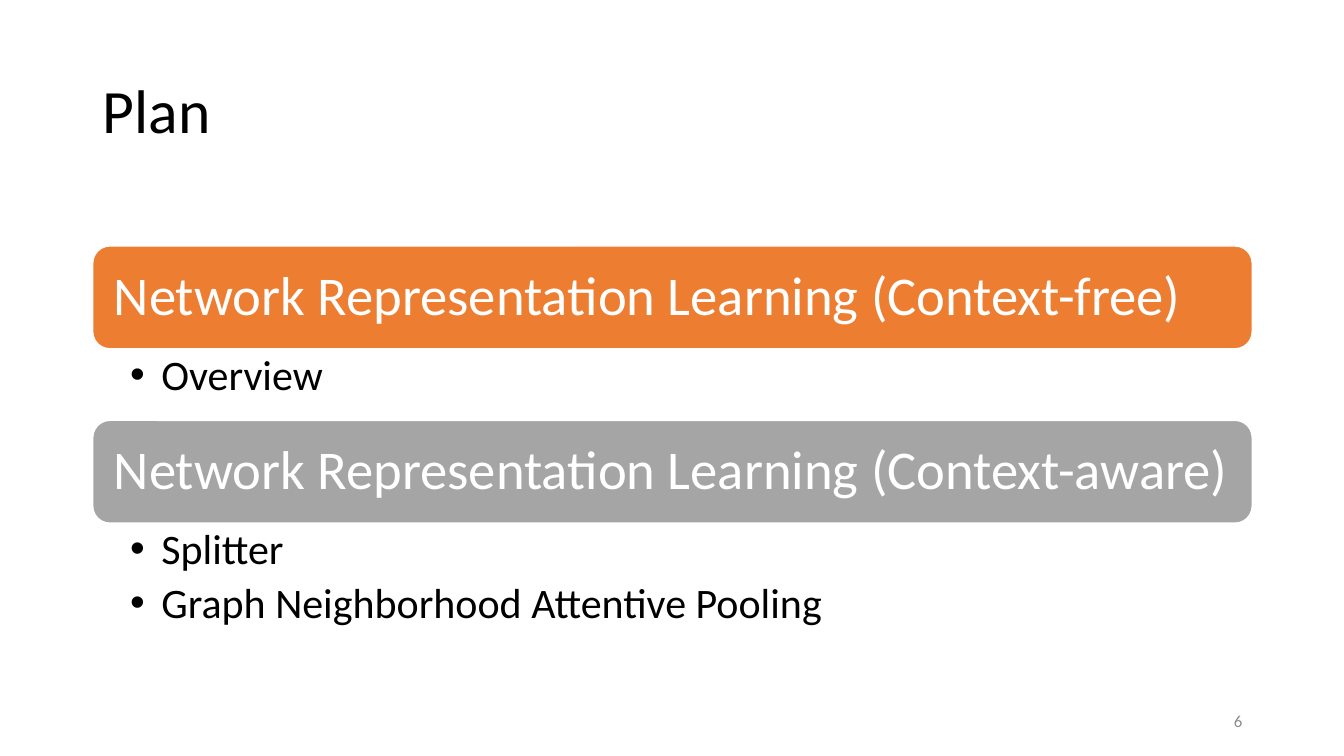
from lxml.etree import SubElement
from pptx import Presentation
from pptx.dml.color import RGBColor
from pptx.enum.shapes import MSO_SHAPE
from pptx.enum.text import MSO_ANCHOR, MSO_AUTO_SIZE, PP_ALIGN
from pptx.oxml.ns import qn
from pptx.util import Inches, Pt

BLACK = RGBColor(0x00, 0x00, 0x00)
WHITE = RGBColor(0xFF, 0xFF, 0xFF)
ORANGE = RGBColor(0xED, 0x7D, 0x31)
SILVER = RGBColor(0xA5, 0xA5, 0xA5)
GRAY = RGBColor(0x8C, 0x8C, 0x8C)

TITLE = "Plan"
PAGE_NUMBER = "6"
SECTIONS = [
    ("Network Representation Learning (Context-free)", ORANGE, 0.71, ["Overview"]),
    ("Network Representation Learning (Context-aware)", SILVER, 1.13,
     ["Splitter", "Graph Neighborhood Attentive Pooling"]),
]

SLIDE_WIDTH, SLIDE_HEIGHT = 13.33, 7.5
LEFT, WIDTH = 0.92, 11.5
SECTIONS_TOP, HEADING_HEIGHT = 2.44, 1.02
NUMBER_WIDTH = 3
BULLET_INDENT = Inches(0.31)


def place(shape, left, top, width, height):
    shape.left, shape.top = Inches(left), Inches(top)
    shape.width, shape.height = Inches(width), Inches(height)


def write(shape, lines, size, color, anchor, margins=(0.1, 0.05, 0.1, 0.05),
          align=PP_ALIGN.LEFT, after=0, spacing=0.9):
    frame = shape.text_frame
    frame.text = "\n".join(lines)
    frame.word_wrap = True
    frame.auto_size = MSO_AUTO_SIZE.NONE
    frame.vertical_anchor = anchor
    (frame.margin_left, frame.margin_top,
     frame.margin_right, frame.margin_bottom) = map(Inches, margins)
    for para in frame.paragraphs:
        para.alignment = align
        para.line_spacing = spacing
        para.space_before, para.space_after = Pt(0), Pt(after)
        for span in para.runs:
            span.font.name = "Calibri"
            span.font.size = Pt(size)
            span.font.color.rgb = color


def add_bullets(shape):
    for para in shape.text_frame.paragraphs:
        properties = para._p.get_or_add_pPr()
        properties.set("marL", str(BULLET_INDENT))
        properties.set("indent", str(-BULLET_INDENT))
        SubElement(properties, qn("a:buChar"), char="•")


def main():
    deck = Presentation()
    deck.slide_width, deck.slide_height = Inches(SLIDE_WIDTH), Inches(SLIDE_HEIGHT)
    page = deck.slides.add_slide(deck.slide_layouts.get_by_name("Two Content"))

    title = page.shapes.title
    place(title, LEFT, 0.4, WIDTH, 1.45)
    write(title, [TITLE], 44, BLACK, MSO_ANCHOR.MIDDLE)

    top = SECTIONS_TOP
    bodies = list(page.placeholders)[1:]
    for body, (heading, color, list_height, items) in zip(bodies, SECTIONS):
        bar = page.shapes.add_shape(
            MSO_SHAPE.ROUNDED_RECTANGLE, Inches(LEFT), Inches(top),
            Inches(WIDTH), Inches(HEADING_HEIGHT))
        bar.shadow.inherit = False
        bar.fill.solid()
        bar.fill.fore_color.rgb = color
        bar.line.color.rgb = WHITE
        bar.line.width = Pt(1)
        write(bar, [heading], 39, WHITE, MSO_ANCHOR.MIDDLE, (0.16, 0.16, 0.16, 0.16))
        top += HEADING_HEIGHT

        place(body, LEFT, top, WIDTH, list_height)
        write(body, items, 30, BLACK, MSO_ANCHOR.TOP, (0.37, 0.05, 0.3, 0.05), after=6)
        add_bullets(body)
        top += list_height

    number = page.shapes.add_textbox(0, 0, 0, 0)
    place(number, LEFT + WIDTH - NUMBER_WIDTH, 6.95, NUMBER_WIDTH, 0.4)
    write(number, [PAGE_NUMBER], 12, GRAY, MSO_ANCHOR.MIDDLE,
          align=PP_ALIGN.RIGHT, after=6, spacing=1.0)

    deck.save("out.pptx")


if __name__ == "__main__":
    main()
